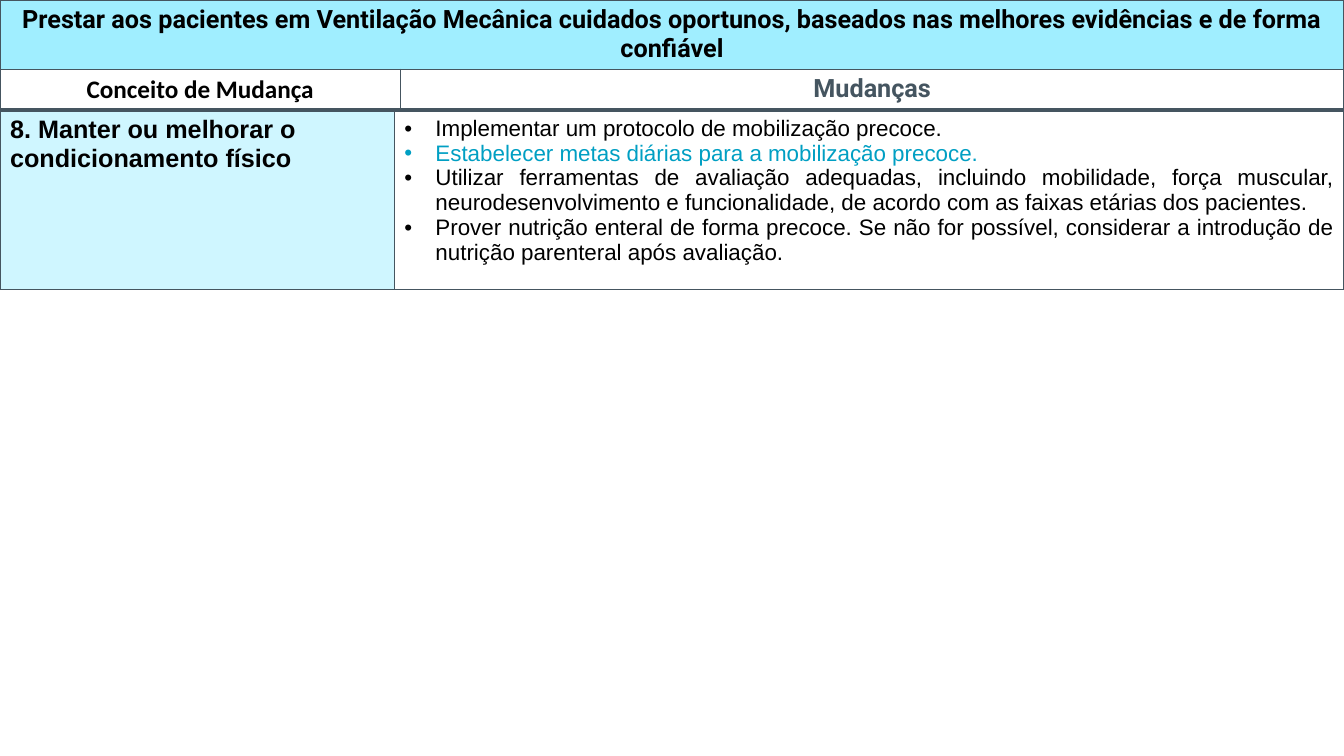
"""Builds the slide on early mobilisation of ventilated patients."""
import pptx
import pptx.dml.color
import pptx.enum.text
import pptx.oxml
import pptx.oxml.ns
import pptx.util

COLORS = {
    "black": "000000", "white": "FFFFFF", "slate": "455560",
    "blue": "009FC3", "cyan": "A0EEFF", "pale": "CFF6FF",
}
ALIGN = pptx.enum.text.PP_ALIGN
ANCHOR = pptx.enum.text.MSO_ANCHOR
CHANGES = [
    ("Implementar um protocolo de mobilização precoce.", "black", ALIGN.LEFT),
    ("Estabelecer metas diárias para a mobilização precoce.", "blue", ALIGN.LEFT),
    ("Utilizar ferramentas de avaliação adequadas, incluindo mobilidade, força muscular, "
     "neurodesenvolvimento e funcionalidade, de acordo com as faixas etárias dos pacientes.",
     "black", ALIGN.JUSTIFY),
    ("Prover nutrição enteral de forma precoce. Se não for possível, considerar a introdução de "
     "nutrição parenteral após avaliação.", "black", ALIGN.JUSTIFY),
]


def xml(tag, attributes="", children=""):
    namespace = pptx.oxml.ns.nsdecls("a")
    return pptx.oxml.parse_xml(f"<a:{tag} {namespace} {attributes}>{children}</a:{tag}>")


def write(paragraph, text, font="Arial", size=18, color="black", bold=True,
          align=ALIGN.LEFT, bullet=False):
    paragraph.alignment = align
    if bullet:
        indent = pptx.util.Inches(0.31)
        properties = paragraph._p.get_or_add_pPr()
        properties.set("marL", str(indent))
        properties.set("indent", str(-indent))
        properties.append(xml("buFont", 'typeface="Arial"'))
        properties.append(xml("buChar", 'char="•"'))
    run = paragraph.add_run()
    run.text = text
    run.font.name = font
    run.font.size = pptx.util.Pt(size)
    run.font.bold = bold
    run.font.color.rgb = pptx.dml.color.RGBColor.from_string(COLORS[color])


class SlideBuilder:
    """Places tables and cells on a grid of 100 columns by 100 rows."""

    def __init__(self, presentation):
        self.column = presentation.slide_width / 100
        self.row = presentation.slide_height / 100
        self.slide = presentation.slides.add_slide(presentation.slide_layouts[6])

    def table(self, top, columns, rows):
        shape = self.slide.shapes.add_table(
            len(rows), len(columns), 0, int(top * self.row),
            int(sum(columns) * self.column), int(sum(rows) * self.row))
        table = shape.table
        table.first_row = table.horz_banding = False
        for column, width in zip(table.columns, columns):
            column.width = int(width * self.column)
        for row, height in zip(table.rows, rows):
            row.height = int(height * self.row)
        for cell in table.iter_cells():
            self.border(cell)
        return table

    def border(self, cell, color="slate", width=1):
        properties = cell._tc.get_or_add_tcPr()
        line = f'<a:solidFill><a:srgbClr val="{COLORS[color]}"/></a:solidFill>'
        for side in "LRTB":
            properties.append(xml(f"ln{side}", f'w="{pptx.util.Pt(width)}"', line))

    def cell(self, cell, fill, anchor=ANCHOR.TOP):
        cell.fill.solid()
        cell.fill.fore_color.rgb = pptx.dml.color.RGBColor.from_string(COLORS[fill])
        cell.vertical_anchor = anchor
        return cell.text_frame.paragraphs[0]


def main():
    presentation = pptx.Presentation()
    presentation.slide_width = pptx.util.Inches(13.33)
    presentation.slide_height = pptx.util.Inches(7.5)
    builder = SlideBuilder(presentation)

    heading = builder.table(0, [29.8, 70.2], [9.1, 5.2])
    title, concept, changes = heading.cell(0, 0), heading.cell(1, 0), heading.cell(1, 1)
    title.merge(heading.cell(0, 1))
    write(builder.cell(title, "cyan"),
          "Prestar aos pacientes em Ventilação Mecânica cuidados oportunos, baseados nas "
          "melhores evidências e de forma confiável", font="Roboto", align=ALIGN.CENTER)
    write(builder.cell(concept, "white", ANCHOR.MIDDLE), "Conceito de Mudança",
          font="Calibri", align=ALIGN.CENTER)
    concept.margin_left = concept.margin_right = concept.margin_top = pptx.util.Inches(0.01)
    concept.margin_bottom = 0
    write(builder.cell(changes, "white", ANCHOR.MIDDLE), "Mudanças",
          font="Roboto", color="slate", align=ALIGN.CENTER)

    body = builder.table(14.67, [29.33, 70.67], [23.6])
    write(builder.cell(body.cell(0, 0), "pale"),
          "8. Manter ou melhorar o condicionamento físico")
    details = body.cell(0, 1)
    paragraph = builder.cell(details, "white")
    for index, (text, color, align) in enumerate(CHANGES):
        if index:
            paragraph = details.text_frame.add_paragraph()
        write(paragraph, text, size=16, color=color, bold=False, align=align, bullet=True)

    presentation.save("out.pptx")


if __name__ == "__main__":
    main()
